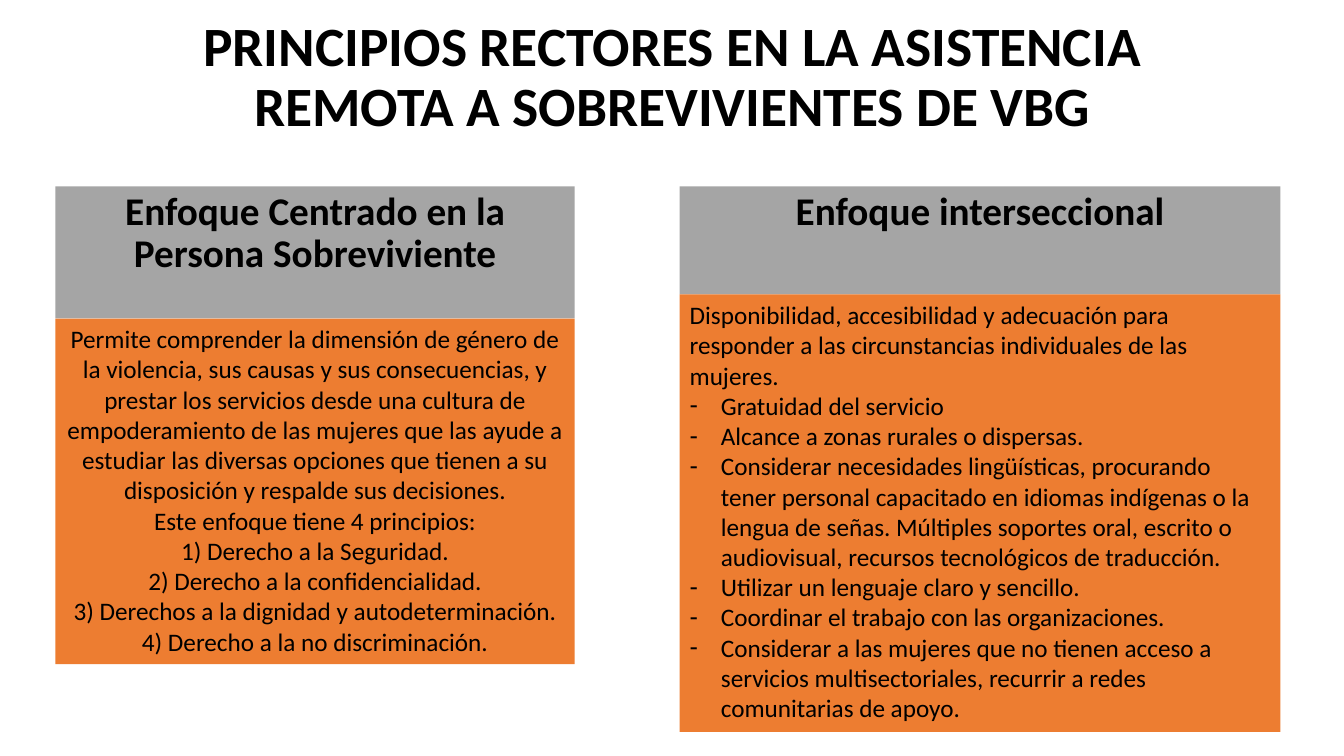
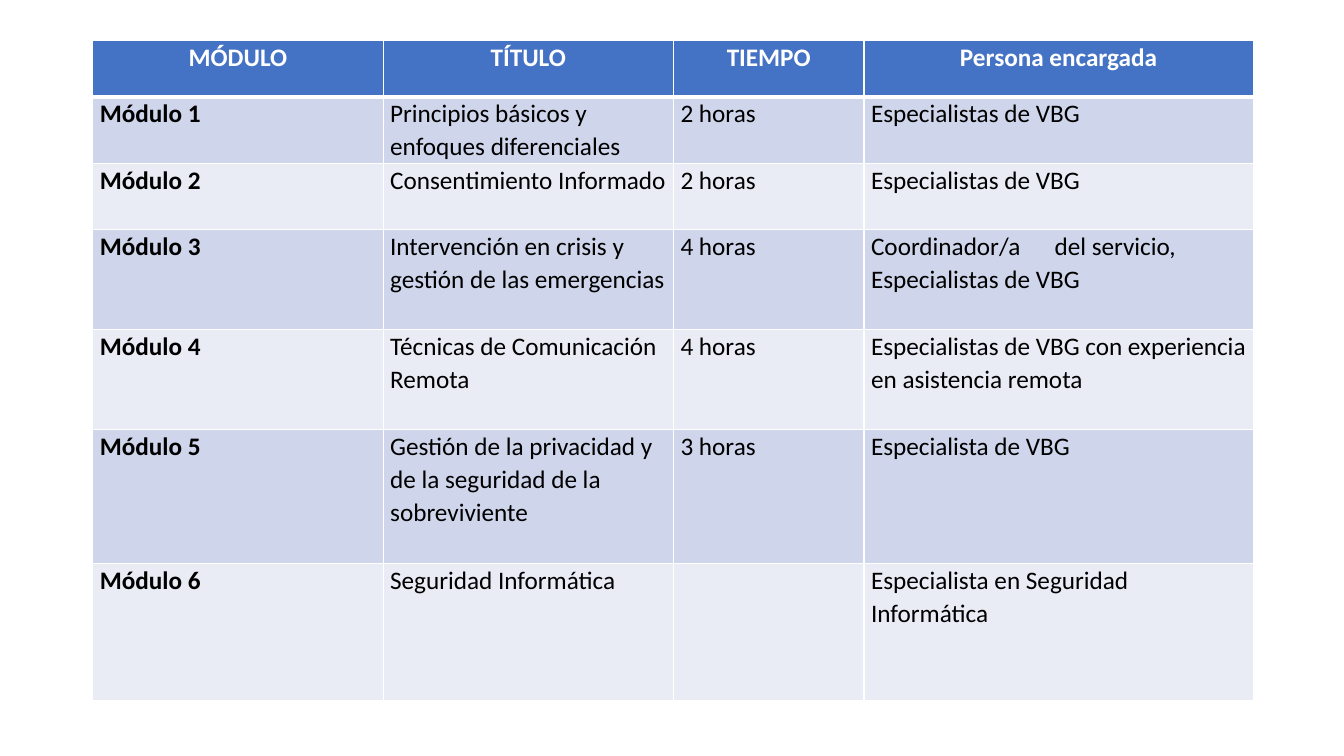
from lxml.etree import SubElement
from pptx import Presentation
from pptx.dml.color import RGBColor
from pptx.enum.text import MSO_ANCHOR, MSO_AUTO_SIZE, PP_ALIGN
from pptx.oxml.ns import qn
from pptx.util import Inches, Pt

FONT = "Calibri"
BLACK = RGBColor(0x00, 0x00, 0x00)
WHITE = RGBColor(0xFF, 0xFF, 0xFF)
GRAY = RGBColor(0xA5, 0xA5, 0xA5)
ORANGE = RGBColor(0xED, 0x7D, 0x31)
BLUE = RGBColor(0x44, 0x72, 0xC4)
BAND_COLORS = [RGBColor(0xE9, 0xEB, 0xF5), RGBColor(0xCF, 0xD5, 0xEA)]

TITLE = "PRINCIPIOS RECTORES EN LA ASISTENCIA REMOTA A SOBREVIVIENTES DE VBG"
SURVIVOR_LINES = [
    "Permite comprender la dimensión de género de la violencia, sus causas y sus "
    "consecuencias, y prestar los servicios desde una cultura de empoderamiento de las "
    "mujeres que las ayude a estudiar las diversas opciones que tienen a su disposición "
    "y respalde sus decisiones.",
    "Este enfoque tiene 4 principios:",
    "1) Derecho a la Seguridad.",
    "2) Derecho a la confidencialidad.",
    "3) Derechos a la dignidad y autodeterminación.",
    "4) Derecho a la no discriminación.",
]
INTERSECTIONAL_INTRO = (
    "Disponibilidad, accesibilidad y adecuación para responder a las circunstancias "
    "individuales de las mujeres."
)
INTERSECTIONAL_ITEMS = [
    "Gratuidad del servicio",
    "Alcance a zonas rurales o dispersas.",
    "Considerar necesidades lingüísticas, procurando tener personal capacitado en idiomas "
    "indígenas o la lengua de señas. Múltiples soportes oral, escrito o audiovisual, "
    "recursos tecnológicos de traducción.",
    "Utilizar un lenguaje claro y sencillo.",
    "Coordinar el trabajo con las organizaciones.",
    "Considerar a las mujeres que no tienen acceso a servicios multisectoriales, recurrir "
    "a redes comunitarias de apoyo.",
]

COLUMN_WIDTHS = [2.88, 2.88, 1.89, 3.86]
ROW_HEIGHTS = [0.56, 0.66, 0.66, 0.99, 0.99, 1.33, 1.36]
MODULE_ROWS = [
    ["MÓDULO", "TÍTULO", "TIEMPO", "Persona encargada"],
    ["Módulo 1", "Principios básicos y enfoques diferenciales", "2 horas",
     "Especialistas de VBG"],
    ["Módulo 2", "Consentimiento Informado", "2 horas", "Especialistas de VBG"],
    ["Módulo 3", "Intervención en crisis y gestión de las emergencias", "4 horas",
     "Coordinador/a\tdel servicio,\nEspecialistas de VBG"],
    ["Módulo 4", "Técnicas de Comunicación Remota", "4 horas",
     "Especialistas de VBG con experiencia en asistencia remota"],
    ["Módulo 5", "Gestión de la privacidad y de la seguridad de la sobreviviente",
     "3 horas", "Especialista de VBG"],
    ["Módulo 6", "Seguridad Informática", "", "Especialista en Seguridad Informática"],
]


def style_paragraph(paragraph, size, color=BLACK, bold=False,
                    alignment=PP_ALIGN.LEFT, line_spacing=1.0, space_before=0):
    paragraph.alignment = alignment
    paragraph.line_spacing = line_spacing
    paragraph.space_before = Pt(space_before)
    font = paragraph.font
    font.name = FONT
    font.size = Pt(size)
    font.bold = bold
    font.color.rgb = color


def set_bullet(paragraph, character=None):
    properties = paragraph._p.get_or_add_pPr()
    indent = Inches(0.31) if character else 0
    properties.set("marL", str(indent))
    properties.set("indent", str(-indent))
    if character:
        SubElement(properties, qn("a:buChar"), char=character)
    else:
        SubElement(properties, qn("a:buNone"))


def set_tab_stop(paragraph, position):
    tab_list = SubElement(paragraph._p.get_or_add_pPr(), qn("a:tabLst"))
    SubElement(tab_list, qn("a:tab"), pos=str(Inches(position)), algn="l")


def place(shape, left, top, width, height):
    shape.left, shape.top = Inches(left), Inches(top)
    shape.width, shape.height = Inches(width), Inches(height)


def fill_placeholder(shape, box, lines, anchor=MSO_ANCHOR.TOP, fill=None):
    place(shape, *box)
    if fill is not None:
        shape.fill.solid()
        shape.fill.fore_color.rgb = fill
    frame = shape.text_frame
    frame.text = "\n".join(lines)
    frame.word_wrap = True
    frame.auto_size = MSO_AUTO_SIZE.NONE
    frame.vertical_anchor = anchor
    return frame.paragraphs


def add_title(slide, text):
    box = (0.92, 0.36, 11.5, 0.84)
    for paragraph in fill_placeholder(slide.shapes.title, box, [text], MSO_ANCHOR.MIDDLE):
        style_paragraph(paragraph, 39.6, bold=True, alignment=PP_ALIGN.CENTER,
                        line_spacing=0.9)


def add_heading(shape, box, text):
    for paragraph in fill_placeholder(shape, box, [text], fill=GRAY):
        set_bullet(paragraph)
        style_paragraph(paragraph, 28, bold=True, alignment=PP_ALIGN.CENTER,
                        line_spacing=0.9, space_before=10)


def add_panel(shape, box, lines, alignment, items=()):
    paragraphs = fill_placeholder(shape, box, [*lines, *items], fill=ORANGE)
    for index, paragraph in enumerate(paragraphs):
        set_bullet(paragraph, "-" if index >= len(lines) else None)
        style_paragraph(paragraph, 18, alignment=alignment)


def set_cell_borders(cell, top, bottom):
    properties = cell._tc.get_or_add_tcPr()
    for side, width in (("L", 1), ("R", 1), ("T", top), ("B", bottom)):
        line = SubElement(properties, qn(f"a:ln{side}"), w=str(Pt(width)))
        solid = SubElement(line, qn("a:solidFill"))
        SubElement(solid, qn("a:srgbClr"), val=str(WHITE))


def fill_cell(cell, text, row, column):
    is_header = row == 0
    set_cell_borders(cell, top=3 if row == 1 else 1, bottom=3 if is_header else 1)
    cell.fill.solid()
    cell.fill.fore_color.rgb = BLUE if is_header else BAND_COLORS[row % 2]
    cell.margin_left = cell.margin_right = Inches(0.07)
    cell.margin_top = cell.margin_bottom = 0
    cell.text = text
    for paragraph in cell.text_frame.paragraphs:
        if "\t" in paragraph.text:
            set_tab_stop(paragraph, 1.82)
        style_paragraph(
            paragraph, 18,
            color=WHITE if is_header else BLACK,
            bold=is_header or column == 0,
            alignment=PP_ALIGN.CENTER if is_header else PP_ALIGN.LEFT,
            line_spacing=1.07,
        )


def add_module_table(slide):
    frame = slide.shapes.add_table(
        len(MODULE_ROWS), len(COLUMN_WIDTHS), Inches(0.92), Inches(0.4),
        Inches(sum(COLUMN_WIDTHS)), Inches(sum(ROW_HEIGHTS)))
    table = frame.table
    for column, width in zip(table.columns, COLUMN_WIDTHS):
        column.width = Inches(width)
    for row, height in zip(table.rows, ROW_HEIGHTS):
        row.height = Inches(height)
    for row, texts in enumerate(MODULE_ROWS):
        for column, text in enumerate(texts):
            fill_cell(table.cell(row, column), text, row, column)


def build_principles_slide(presentation):
    slide = presentation.slides.add_slide(presentation.slide_layouts[4])
    add_title(slide, TITLE)
    _, left_heading, left_panel, right_heading, right_panel = slide.placeholders
    add_heading(left_heading, (0.55, 1.85, 5.15, 1.31),
                "Enfoque Centrado en la Persona Sobreviviente")
    add_panel(left_panel, (0.55, 3.16, 5.15, 3.43), SURVIVOR_LINES, PP_ALIGN.CENTER)
    add_heading(right_heading, (6.74, 1.85, 5.96, 1.07), "Enfoque interseccional")
    add_panel(right_panel, (6.74, 2.92, 5.96, 4.34), [INTERSECTIONAL_INTRO],
              PP_ALIGN.LEFT, INTERSECTIONAL_ITEMS)


def build_modules_slide(presentation):
    slide = presentation.slides.add_slide(presentation.slide_layouts[6])
    add_module_table(slide)


def main():
    presentation = Presentation()
    presentation.slide_width = Inches(13.33)
    presentation.slide_height = Inches(7.5)
    build_principles_slide(presentation)
    build_modules_slide(presentation)
    presentation.save("out.pptx")


if __name__ == "__main__":
    main()
